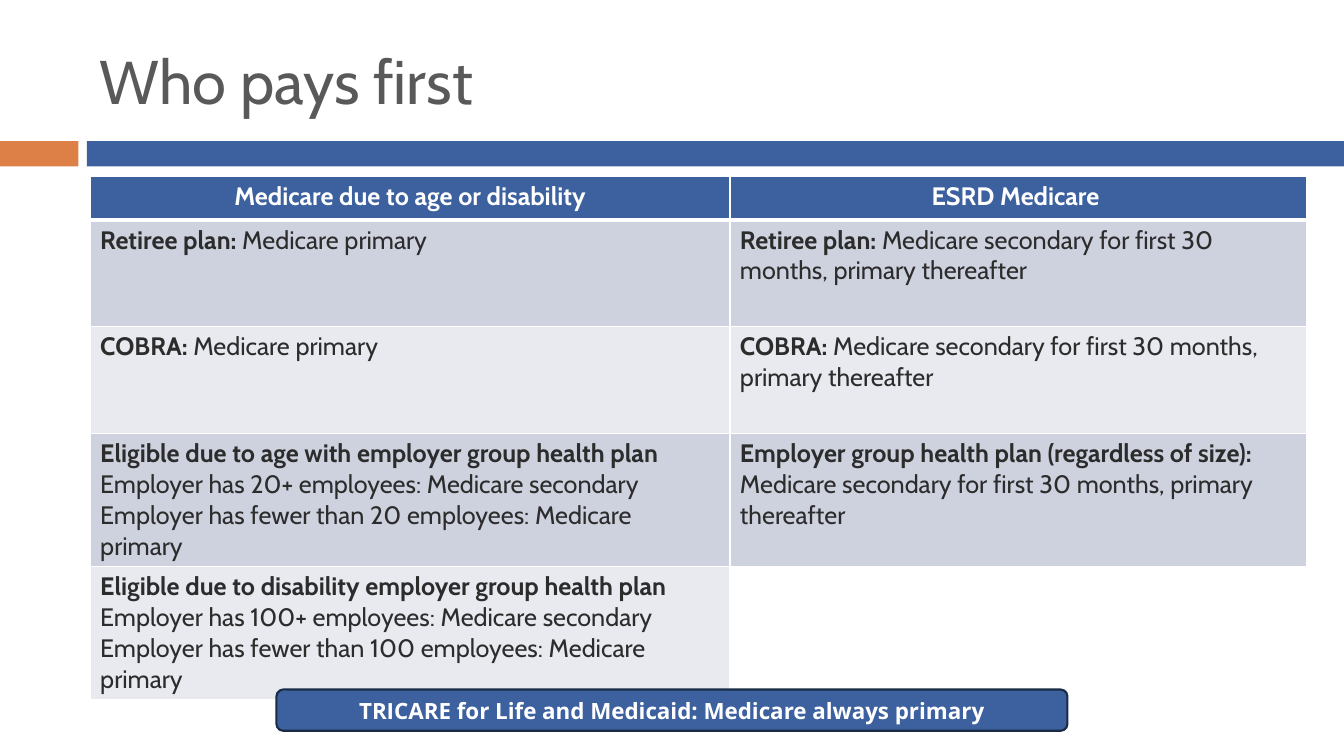
from lxml.etree import SubElement
from pptx import Presentation
from pptx.dml.color import RGBColor
from pptx.enum.shapes import MSO_SHAPE
from pptx.enum.text import MSO_ANCHOR, MSO_AUTO_SIZE, PP_ALIGN
from pptx.oxml.ns import qn
from pptx.util import Pt

COLORS = {
    "orange": "DD8047", "blue": "3C619E", "navy": "1A2B45", "white": "FFFFFF",
    "title": "595959", "body": "2C2C2C", "dark band": "CED2DF", "light band": "E8EAF0",
}
COLUMN_WIDTHS = (457, 412)
ROW_HEIGHTS = (31, 76.3, 76.3, 93, 76.3)
HEADINGS = ("Medicare due to age or disability", "ESRD Medicare ")
RULES = [
    ([[("Retiree plan:", True), (" Medicare primary", False)]],
     [[("Retiree plan:", True),
       (" Medicare secondary for first 30 months, primary thereafter", False)]]),
    ([[("COBRA:", True), (" Medicare primary", False)]],
     [[("COBRA: ", True),
       ("Medicare secondary for first 30 months, primary thereafter", False)]]),
    ([[("Eligible due to age with employer group health plan", True)],
      [("Employer has 20+ employees: Medicare secondary", False)],
      [("Employer has fewer than 20 employees: Medicare primary", False)]],
     [[("Employer group health plan (regardless of size): ", True),
       ("Medicare secondary for first 30 months, primary thereafter", False)]]),
    ([[("Eligible due to disability employer group health plan", True)],
      [("Employer has 100+ employees: Medicare secondary", False)],
      [("Employer has fewer than 100 employees: Medicare primary", False)]],
     []),
]


def rgb(name):
    return RGBColor.from_string(COLORS[name])


def style(paragraph, size, color, face="Cabin", bold=None, align=PP_ALIGN.LEFT):
    paragraph.alignment = align
    font = paragraph.font
    font.size, font.name, font.bold = Pt(size), face, bold
    font.color.rgb = rgb(color)


def add_block(slide, preset, fill, left, top, width, height):
    block = slide.shapes.add_shape(preset, Pt(left), Pt(top), Pt(width), Pt(height))
    block.shadow.inherit = False
    block.fill.solid()
    block.fill.fore_color.rgb = rgb(fill)
    block.line.fill.background()
    return block


def place_title(slide, left, top, width, height):
    title = slide.shapes.title
    title.left, title.top, title.width, title.height = map(Pt, (left, top, width, height))
    frame = title.text_frame
    frame.text = "Who pays first"
    frame.word_wrap = True
    frame.auto_size = MSO_AUTO_SIZE.NONE
    frame.vertical_anchor = MSO_ANCHOR.MIDDLE
    style(frame.paragraphs[0], 44, "title")


def add_divider(slide, left, top, width, height):
    accent, gap = 56, 6
    add_block(slide, MSO_SHAPE.RECTANGLE, "orange", left, top, accent, height)
    add_block(slide, MSO_SHAPE.RECTANGLE, "blue", left + accent + gap, top,
              width - accent - gap, height)


def set_borders(cell, top, bottom):
    properties = cell._tc.get_or_add_tcPr()
    for side, weight in (("L", 1), ("R", 1), ("T", top), ("B", bottom)):
        border = SubElement(properties, qn(f"a:ln{side}"), w=str(Pt(weight)))
        fill = SubElement(border, qn("a:solidFill"))
        SubElement(fill, qn("a:srgbClr"), val=COLORS["white"])


def fill_cell(cell, fill, top=1, bottom=1):
    set_borders(cell, top, bottom)
    cell.fill.solid()
    cell.fill.fore_color.rgb = rgb(fill)


def write_rule(cell, rule):
    frame = cell.text_frame
    for index, line in enumerate(rule):
        paragraph = frame.add_paragraph() if index else frame.paragraphs[0]
        style(paragraph, 18, "body")
        for words, bold in line:
            run = paragraph.add_run()
            run.text = words
            run.font.bold = bold


def add_payer_table(slide, left, top):
    table = slide.shapes.add_table(
        len(ROW_HEIGHTS), len(COLUMN_WIDTHS), Pt(left), Pt(top),
        Pt(sum(COLUMN_WIDTHS)), Pt(sum(ROW_HEIGHTS))).table
    for column, width in zip(table.columns, COLUMN_WIDTHS):
        column.width = Pt(width)
    for row, height in zip(table.rows, ROW_HEIGHTS):
        row.height = Pt(height)
    for column, heading in enumerate(HEADINGS):
        cell = table.cell(0, column)
        cell.text = heading
        fill_cell(cell, "blue", bottom=3)
        style(cell.text_frame.paragraphs[0], 18, "white", bold=True, align=PP_ALIGN.CENTER)
    for row, rules in enumerate(RULES, 1):
        band = "dark band" if row % 2 else "light band"
        for column, rule in enumerate(rules):
            cell = table.cell(row, column)
            fill_cell(cell, band if rule else "white", top=3 if row == 1 else 1)
            write_rule(cell, rule)


def add_callout(slide, left, top, width, height):
    callout = add_block(slide, MSO_SHAPE.ROUNDED_RECTANGLE, "blue", left, top, width, height)
    callout.line.color.rgb = rgb("navy")
    callout.line.width = Pt(1.5)
    frame = callout.text_frame
    frame.text = "TRICARE for Life and Medicaid: Medicare always primary"
    frame.word_wrap = True
    frame.vertical_anchor = MSO_ANCHOR.MIDDLE
    style(frame.paragraphs[0], 16, "white", "Open Sans", True, PP_ALIGN.CENTER)


def main():
    deck = Presentation()
    deck.slide_width, deck.slide_height = Pt(960), Pt(540)
    slide = deck.slides.add_slide(deck.slide_layouts[5])
    add_divider(slide, 0, 100.8, 960, 18)
    place_title(slide, 64, 18, 856, 78)
    add_payer_table(slide, 64.4, 126)
    add_callout(slide, 197.5, 492.5, 565, 29.5)
    deck.save("out.pptx")


if __name__ == "__main__":
    main()
